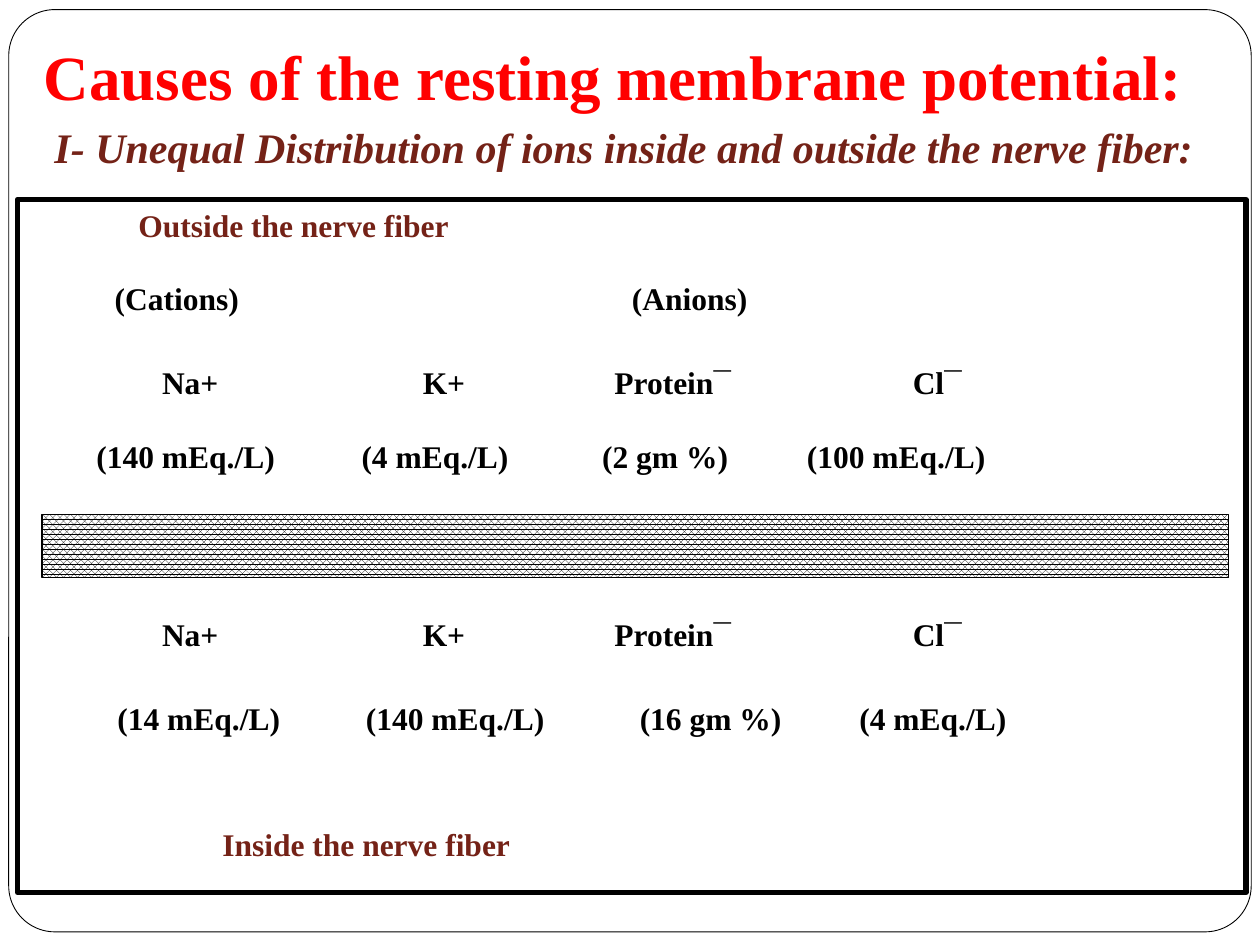
"""Build the slide on the causes of the resting membrane potential."""
from lxml.etree import SubElement
from pptx import Presentation
from pptx.dml.color import RGBColor
from pptx.enum.dml import MSO_PATTERN
from pptx.enum.shapes import MSO_SHAPE
from pptx.enum.text import MSO_AUTO_SIZE
from pptx.oxml.ns import qn
from pptx.util import Pt

COLORS = {"title": "FF0000", "heading": "742217", "ink": "000000", "paper": "FFFFFF"}
FONT, BAR_FONT, BAR = "Times New Roman", "Arial", "¯"

HEADINGS = [
    ("Causes of the resting membrane potential:", (18, 18, 702, 51), 36, "title", False),
    ("I- Unequal Distribution of ions inside and outside the nerve fiber:",
     (24, 66, 666, 36), 24, "heading", True),
    ("Outside the nerve fiber", (72, 114, 570, 28.8), 18, "heading", False),
    ("Inside the nerve fiber", (120, 468, 456, 28.8), 18, "heading", False),
]

IONS = ["Na+", "K+", "Protein¯", "Cl¯"]
ION_TABS = [31.5, 180.5, 290, 460.5]
ROWS = [
    (["(Cations)", "(Anions)"], (54, 156, 612, 34), [4.5, 300]),
    (IONS, (54, 204, 636, 34), ION_TABS),
    (["(140 mEq./L)", "(4 mEq./L)", "(2 gm %)", "(100 mEq./L)"],
     (48, 246, 660, 34), [0, 151.5, 289, 406]),
    (IONS, (54, 348, 636, 34), ION_TABS),
    (["(14 mEq./L)", "(140 mEq./L)", "(16 gm %)", "(4 mEq./L)"],
     (60, 396, 660, 34), [0, 142, 298.5, 424]),
]


def rgb(name):
    return RGBColor.from_string(COLORS[name])


def add_run(p, text, size, color, font=FONT, italic=False):
    r = p.add_run()
    r.text = text
    r.font.name, r.font.size = font, Pt(size)
    r.font.bold, r.font.italic = True, italic
    r.font.color.rgb = rgb(color)


def add_line(s, box, tabs=()):
    tf = s.shapes.add_textbox(*map(Pt, box)).text_frame
    tf.word_wrap = True
    tf.auto_size = MSO_AUTO_SIZE.SHAPE_TO_FIT_TEXT
    p = tf.paragraphs[0]
    pPr = p._p.get_or_add_pPr()
    SubElement(SubElement(pPr, qn("a:spcBef")), qn("a:spcPct"), val="50000")
    if tabs:
        stops = SubElement(pPr, qn("a:tabLst"))
        for pos in tabs:
            SubElement(stops, qn("a:tab"), pos=str(Pt(pos)), algn="l")
    return p


def add_row(s, cells, box, stops):
    p = add_line(s, box, [pos for pos in stops if pos])
    for cell, pos in zip(cells, stops):
        add_run(p, ("\t" if pos else "") + cell.rstrip(BAR), 18, "ink")
        if cell.endswith(BAR):
            add_run(p, BAR, 18, "ink", BAR_FONT)


def add_outline(s, kind, box, width):
    sp = s.shapes.add_shape(kind, *map(Pt, box))
    sp.shadow.inherit = False
    sp.fill.background()
    sp.line.color.rgb = rgb("ink")
    sp.line.width = Pt(width)
    return sp


def main():
    prs = Presentation()
    prs.slide_width, prs.slide_height = Pt(720), Pt(540)
    s = prs.slides.add_slide(prs.slide_layouts[6])

    panel = add_outline(s, MSO_SHAPE.ROUNDED_RECTANGLE, (5, 5.5, 710, 527), 0.5)
    panel.adjustments[0] = 0.05
    panel.fill.solid()
    panel.fill.fore_color.rgb = rgb("paper")

    for text, box, size, color, italic in HEADINGS:
        add_run(add_line(s, box), text, size, color, italic=italic)
    for cells, box, stops in ROWS:
        add_row(s, cells, box, stops)

    membrane = add_outline(s, MSO_SHAPE.FLOWCHART_PROCESS, (24, 294, 678, 36), 0.75)
    membrane.fill.patterned()
    membrane.fill.pattern = MSO_PATTERN.PERCENT_75
    membrane.fill.fore_color.rgb = rgb("ink")
    membrane.fill.back_color.rgb = rgb("paper")

    add_outline(s, MSO_SHAPE.RECTANGLE, (10, 114, 702, 396), 3)
    prs.save("out.pptx")


if __name__ == "__main__":
    main()
